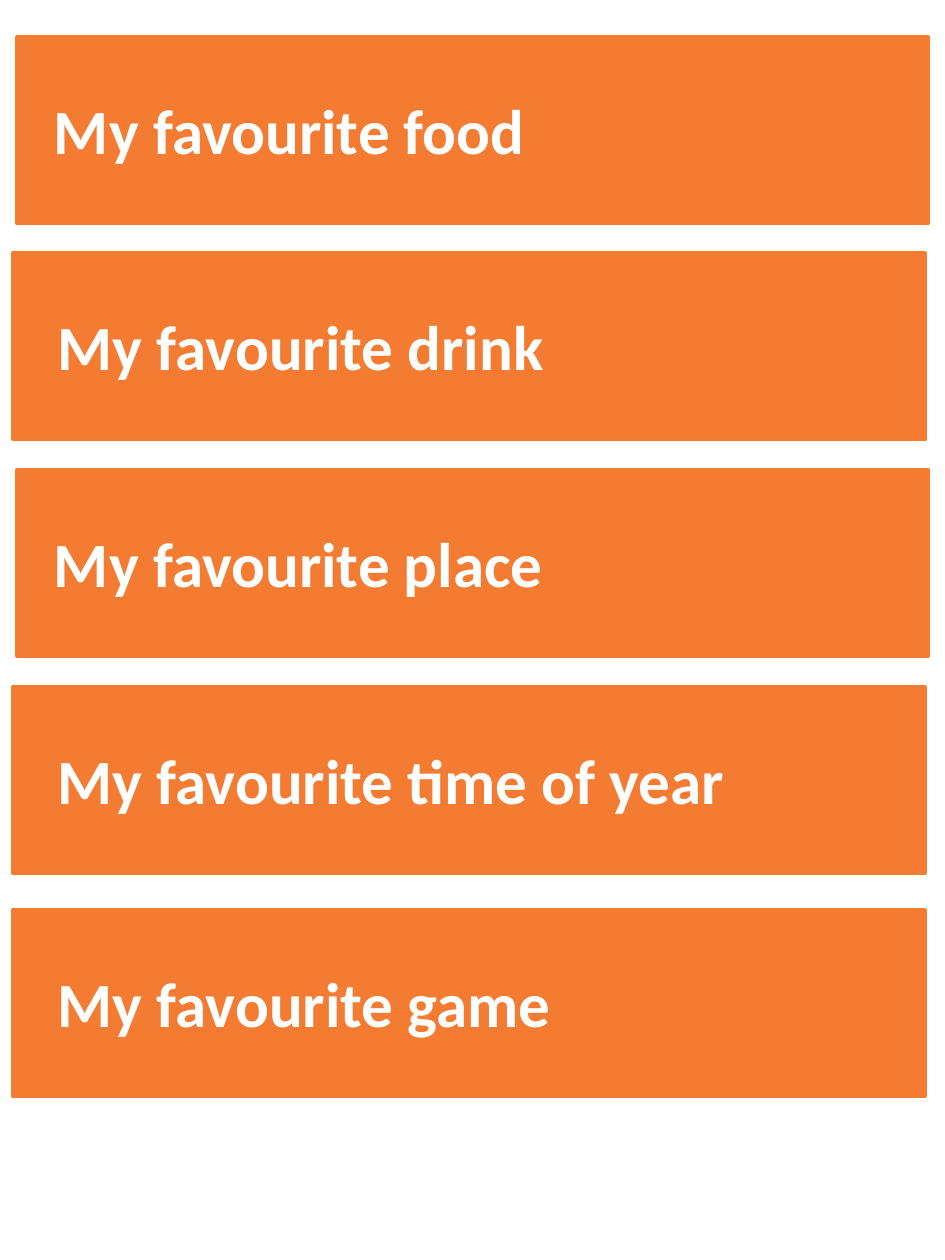
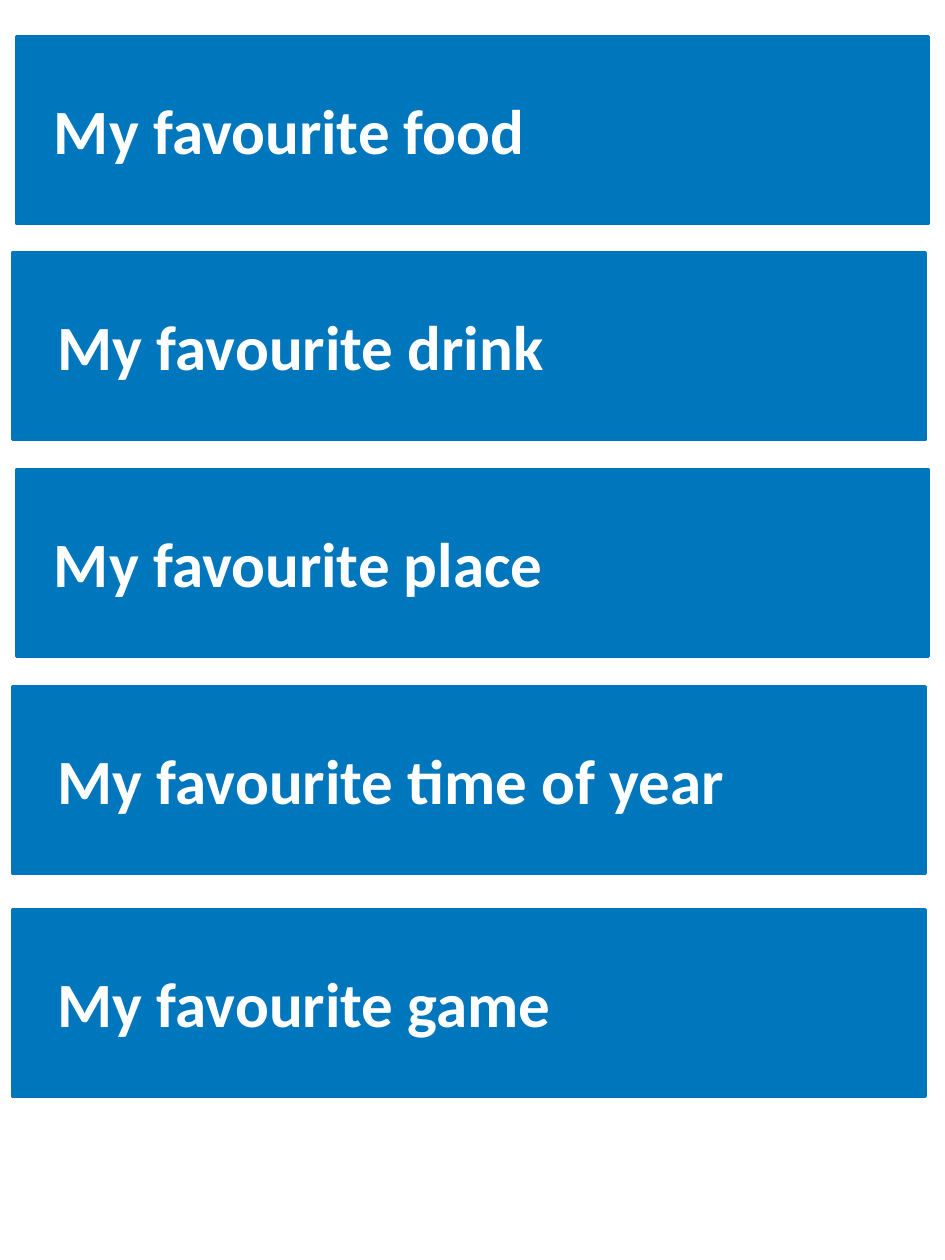
from pptx import Presentation
from pptx.dml.color import RGBColor
from pptx.enum.shapes import MSO_SHAPE as Shape
from pptx.enum.text import MSO_AUTO_SIZE as AutoSize
from pptx.util import Inches, Pt

ORANGE = RGBColor(0xF4, 0x7C, 0x32)
BLUE = RGBColor(0x00, 0x76, 0xBC)
WHITE = RGBColor(0xFF, 0xFF, 0xFF)
FONT = "Calibri"

BAND_WIDTH, BAND_HEIGHT = 7.24, 1.48
FIRST_TOP, BAND_STEP = 0.29, 1.72
LAST_TOP = 7.22
LABEL_WIDTH, LABEL_HEIGHT = 5.75, 0.71
LABEL_DROP = (BAND_HEIGHT - LABEL_HEIGHT) / 2

TOPICS = ["food", "drink", "place", "time of year", "game"]
BAND_TOPS = [FIRST_TOP + i * BAND_STEP for i in range(4)] + [LAST_TOP]
RIGHT_SET = {"food", "place"}

CARD_SETS = [
    (ORANGE, {"place": 6.72, "time of year": 6.46}),
    (BLUE, {"time of year": 6.77}),
]


def write(tf, text, size=36, color=WHITE, bold=True, font=FONT):
    r = tf.paragraphs[0].add_run()
    r.text = text
    r.font.name = font
    r.font.size = Pt(size)
    r.font.bold = bold
    r.font.color.rgb = color


class CardDeck:
    def __init__(self):
        self.prs = Presentation()
        self.prs.slide_width = Inches(7.5)
        self.prs.slide_height = Inches(10)
        self.s = None
        self.color = None

    def new_slide(self, color):
        self.s = self.prs.slides.add_slide(self.prs.slide_layouts[6])
        self.color = color

    def band(self, left, top):
        sp = self.s.shapes.add_shape(
            Shape.RECTANGLE, Inches(left), Inches(top),
            Inches(BAND_WIDTH), Inches(BAND_HEIGHT))
        sp.shadow.inherit = False
        sp.fill.solid()
        sp.fill.fore_color.rgb = self.color
        sp.line.color.rgb = self.color
        sp.line.width = Pt(2)

    def label(self, text, left, top, width):
        sp = self.s.shapes.add_textbox(
            Inches(left), Inches(top), Inches(width), Inches(LABEL_HEIGHT))
        tf = sp.text_frame
        tf.word_wrap = True
        tf.auto_size = AutoSize.SHAPE_TO_FIT_TEXT
        write(tf, text)


def main():
    deck = CardDeck()
    for color, label_widths in CARD_SETS:
        deck.new_slide(color)
        for topic, top in zip(TOPICS, BAND_TOPS):
            band_left, label_left = (0.13, 0.33) if topic in RIGHT_SET else (0.1, 0.36)
            deck.band(band_left, top)
            deck.label(f"My favourite {topic}", label_left, top + LABEL_DROP,
                       label_widths.get(topic, LABEL_WIDTH))
    deck.prs.save("out.pptx")


if __name__ == "__main__":
    main()
